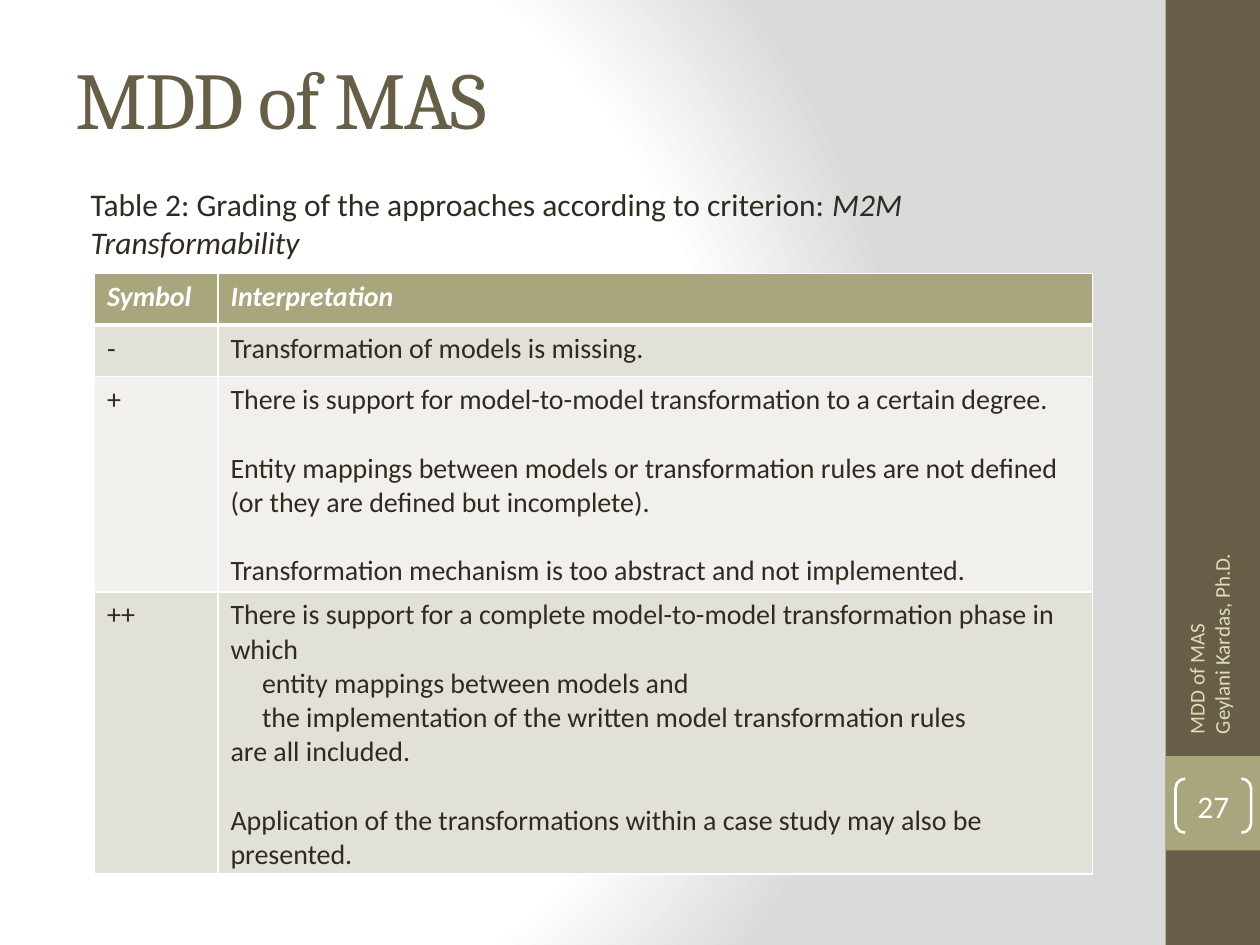
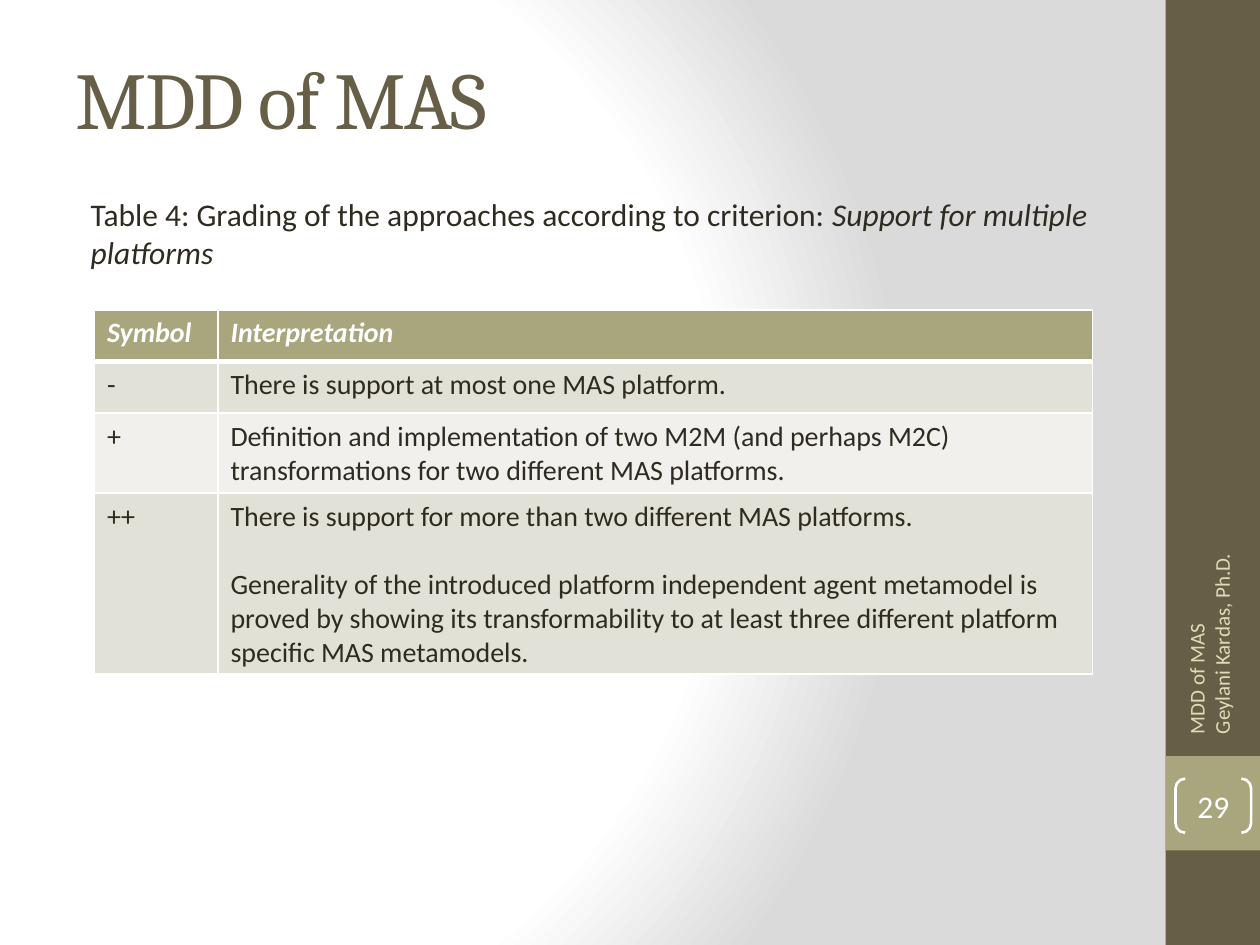
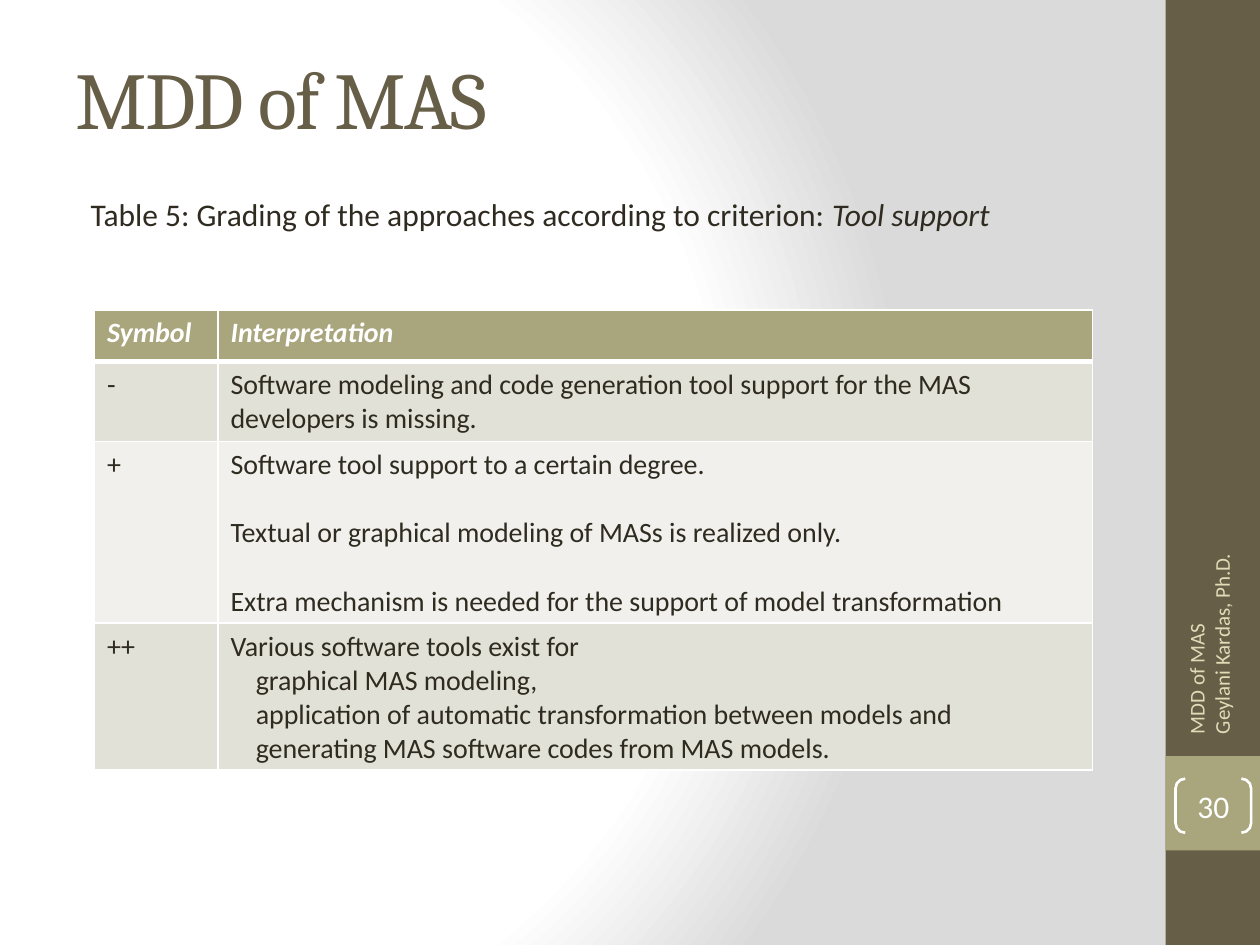
"""Build three slides that grade MDD approaches for multi-agent systems."""
from dataclasses import dataclass

from lxml import etree
from pptx import Presentation
from pptx import oxml
from pptx import util as u
from pptx.dml.color import RGBColor
from pptx.enum import shapes, text
from pptx.oxml import ns

OLIVE, SAGE, INK, WHITE = "675E47", "A9A57C", "2F2B20", "FFFFFF"
CREAM, BAND_DARK, BAND_LIGHT = "DFDCB7", "E2E1D7", "F1F0EC"
HEADING, BODY = "Cambria", "Calibri"
TITLE = "MDD of MAS"
FOOTER = (TITLE, "Geylani Kardas, Ph.D.")
COLUMNS = (0.98, 6.94)
ROW_HEIGHT = 0.41
BLANK_LINE = 19.5


@dataclass(frozen=True)
class Line:
    text: str
    gap: float = 0
    indent: float = 0


@dataclass(frozen=True)
class Grading:
    number: int
    page_number: int
    criterion: str
    caption_top: float
    caption_height: float
    table_top: float
    table_height: float
    missing: tuple[Line, ...]
    partial: tuple[Line, ...]
    full: tuple[Line, ...]


@dataclass(frozen=True)
class Band:
    top: float
    height: float
    color: str


BANDS = (Band(0, 7.5, OLIVE), Band(6, 0.75, SAGE))

GRADINGS = (
    Grading(
        2, 27, "M2M Transformability", 1.42, 0.67, 2.17, 4.74,
        (Line("Transformation of models is missing."),),
        (
            Line("There is support for model-to-model transformation to a certain degree."),
            Line("Entity mappings between models or transformation rules are not defined "
                 "(or they are defined but incomplete).", BLANK_LINE),
            Line("Transformation mechanism is too abstract and not implemented.", BLANK_LINE),
        ),
        (
            Line("There is support for a complete model-to-model transformation phase in which"),
            Line("entity mappings between models and", indent=0.25),
            Line("the implementation of the written model transformation rules", indent=0.25),
            Line("are all included."),
            Line("Application of the transformations within a case study may also be presented.",
                 BLANK_LINE),
        ),
    ),
    Grading(
        4, 29, "Support for multiple platforms", 1.5, 0.92, 2.46, 2.88,
        (Line("There is support at most one MAS platform."),),
        (Line("Definition and implementation of two M2M (and perhaps M2C) transformations "
              "for two different MAS platforms."),),
        (
            Line("There is support for more than two different MAS platforms."),
            Line("Generality of the introduced platform independent agent metamodel is proved by "
                 "showing its transformability to at least three different platform specific MAS "
                 "metamodels.", BLANK_LINE),
        ),
    ),
    Grading(
        5, 30, "Tool support", 1.5, 0.92, 2.46, 3.64,
        (Line("Software modeling and code generation tool support for the MAS developers "
              "is missing."),),
        (
            Line("Software tool support to a certain degree."),
            Line("Textual or graphical modeling of MASs is realized only.", BLANK_LINE),
            Line("Extra mechanism is needed for the support of model transformation", BLANK_LINE),
        ),
        (
            Line("Various software tools exist for"),
            Line("graphical MAS modeling,", indent=0.2),
            Line("application of automatic transformation between models and", indent=0.2),
            Line("generating MAS software codes from MAS models.", indent=0.2),
        ),
    ),
)


def rgb(color: str) -> RGBColor:
    return RGBColor.from_string(color)


def place(shape, left: float, top: float, width: float, height: float) -> None:
    shape.left, shape.top = u.Inches(left), u.Inches(top)
    shape.width, shape.height = u.Inches(width), u.Inches(height)


def set_font(para, size: float, color: str, name: str = BODY, strong: bool = False) -> None:
    para.font.name, para.font.size = name, u.Pt(size)
    para.font.color.rgb = rgb(color)
    para.font.bold = para.font.italic = strong


def write(frame, lines: tuple[Line, ...], size: float, color: str, strong: bool = False) -> None:
    for index, line in enumerate(lines):
        para = frame.add_paragraph() if index else frame.paragraphs[0]
        para.text = line.text
        set_font(para, size, color, strong=strong)
        if line.gap:
            para.space_before = u.Pt(line.gap)
        if line.indent:
            para._p.get_or_add_pPr().set("marL", str(u.Inches(line.indent)))


def set_background(master) -> None:
    master.background.fill.solid()
    properties = master.element.find(".//" + ns.qn("p:bgPr"))
    stops = "".join(
        f'<a:gs pos="{position * 1000}"><a:srgbClr val="{color}"/></a:gs>'
        for position, color in ((0, WHITE), (75, WHITE), (100, "DADADA"))
    )
    gradient = oxml.parse_xml(
        f'<a:gradFill {ns.nsdecls("a")} rotWithShape="1"><a:gsLst>{stops}</a:gsLst>'
        '<a:path path="circle"><a:fillToRect l="20000" t="50000" r="100000" b="50000"/></a:path>'
        "</a:gradFill>"
    )
    properties.replace(properties.find(ns.qn("a:solidFill")), gradient)


def add_title(page) -> None:
    title = page.shapes.title
    place(title, 0.5, 0.3, 8.33, 0.95)
    title.text_frame.vertical_anchor = text.MSO_ANCHOR.MIDDLE
    para = title.text_frame.paragraphs[0]
    para.alignment = text.PP_ALIGN.LEFT
    span = para.add_run()
    span.text = TITLE
    set_font(para, 46, OLIVE, HEADING)
    span._r.get_or_add_rPr().set("spc", "-100")


def add_caption(page, grading: Grading) -> None:
    caption = page.placeholders[1]
    place(caption, 0.5, grading.caption_top, 8.33, grading.caption_height)
    para = caption.text_frame.paragraphs[0]
    para.space_before, para.space_after = u.Pt(0), u.Pt(15)
    properties = para._p.get_or_add_pPr()
    properties.set("marL", str(u.Inches(0.12)))
    properties.set("indent", "0")
    etree.SubElement(properties, ns.qn("a:buNone"))
    para.add_run().text = f"Table {grading.number}: Grading of the approaches according to criterion: "
    span = para.add_run()
    span.text = grading.criterion
    set_font(para, 18, INK)
    span.font.italic = True


def add_sidebar(page, page_number: int) -> None:
    for band in BANDS:
        bar = page.shapes.add_shape(
            shapes.MSO_SHAPE.RECTANGLE, u.Inches(9.25), u.Inches(band.top),
            u.Inches(0.75), u.Inches(band.height))
        bar.shadow.inherit = False
        bar.fill.solid()
        bar.fill.fore_color.rgb = rgb(band.color)
        bar.line.fill.background()

    bracket = page.shapes.add_shape(
        shapes.MSO_SHAPE.DOUBLE_BRACKET, u.Inches(9.33), u.Inches(6.18),
        u.Inches(0.6), u.Inches(0.43))
    bracket.shadow.inherit = False
    bracket.adjustments[0] = 0.179
    bracket.fill.background()
    bracket.line.color.rgb, bracket.line.width = rgb(WHITE), u.Pt(1.5)
    frame = bracket.text_frame
    frame.margin_left = frame.margin_right = frame.margin_top = frame.margin_bottom = 0
    frame.vertical_anchor = text.MSO_ANCHOR.MIDDLE
    write(frame, (Line(str(page_number)),), 18, WHITE)
    frame.paragraphs[0].alignment = text.PP_ALIGN.CENTER

    footer = page.shapes.add_textbox(u.Inches(8.3), u.Inches(4.43), u.Inches(2.59), u.Inches(0.4))
    footer.rotation = 270
    footer.text_frame.word_wrap = True
    footer.text_frame.vertical_anchor = text.MSO_ANCHOR.MIDDLE
    write(footer.text_frame, tuple(Line(entry) for entry in FOOTER), 12, CREAM)


def set_borders(cell, top: float, bottom: float) -> None:
    for side, width in (("L", 1), ("R", 1), ("T", top), ("B", bottom)):
        cell._tc.get_or_add_tcPr().append(oxml.parse_xml(
            f'<a:ln{side} {ns.nsdecls("a")} w="{u.Pt(width)}"><a:solidFill>'
            f'<a:srgbClr val="{WHITE}"/></a:solidFill></a:ln{side}>'))


def add_grades(page, grading: Grading) -> None:
    rows = (
        ("Symbol", (Line("Interpretation"),)),
        ("-", grading.missing),
        ("+", grading.partial),
        ("++", grading.full),
    )
    holder = page.shapes.add_table(
        len(rows), len(COLUMNS), u.Inches(0.75), u.Inches(grading.table_top),
        u.Inches(sum(COLUMNS)), u.Inches(ROW_HEIGHT * len(rows)))
    table = holder.table
    for column, width in zip(table.columns, COLUMNS):
        column.width = u.Inches(width)
    for index, (symbol, meaning) in enumerate(rows):
        table.rows[index].height = u.Inches(ROW_HEIGHT)
        header = index == 0
        fill = SAGE if header else BAND_DARK if index % 2 else BAND_LIGHT
        for cell, lines in zip(table.rows[index].cells, ((Line(symbol),), meaning)):
            set_borders(cell, 3 if index == 1 else 1, 3 if header else 1)
            cell.fill.solid()
            cell.fill.fore_color.rgb = rgb(fill)
            write(cell.text_frame, lines, 16, WHITE if header else INK, header)
    holder.height = u.Inches(grading.table_height)


def main() -> None:
    deck = Presentation()
    deck.slide_width, deck.slide_height = u.Inches(10), u.Inches(7.5)
    set_background(deck.slide_master)
    for grading in GRADINGS:
        page = deck.slides.add_slide(deck.slide_layouts[1])
        add_title(page)
        add_caption(page, grading)
        add_sidebar(page, grading.page_number)
        add_grades(page, grading)
    deck.save("out.pptx")


if __name__ == "__main__":
    main()
